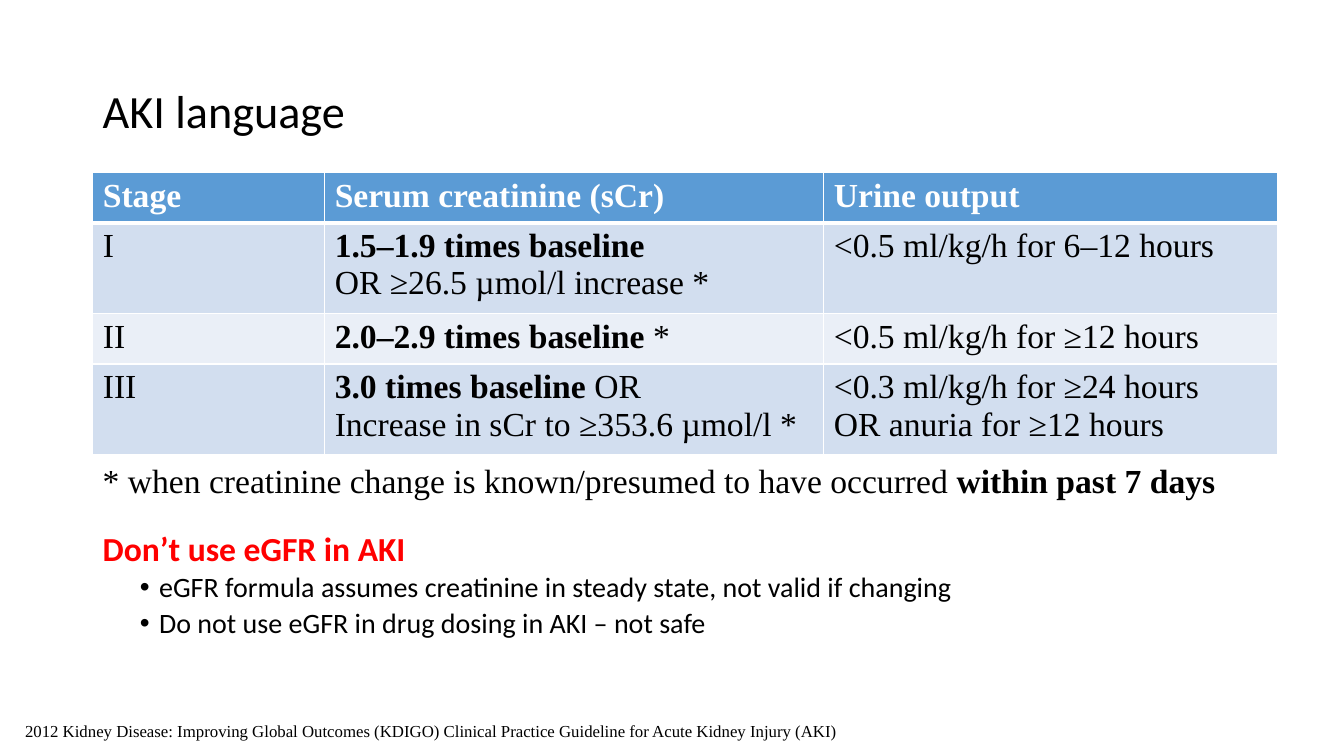
from dataclasses import dataclass

from lxml.etree import SubElement
from pptx import Presentation
from pptx.dml.color import RGBColor as Rgb
from pptx.enum.text import MSO_ANCHOR as Anchor, MSO_AUTO_SIZE as AutoSize
from pptx.oxml.ns import qn
from pptx.slide import Slide
from pptx.table import _Cell as Cell
from pptx.text.text import TextFrame
from pptx.util import Inches, Pt


@dataclass(frozen=True)
class Theme:
    """Colours, fonts and type sizes of the slide."""
    sans: str = "Calibri"
    serif: str = "Times New Roman"
    black: str = "000000"
    white: str = "FFFFFF"
    warning: str = "FF0000"
    header: str = "5B9BD5"
    bands: tuple[str, str] = ("D2DEEF", "EAEFF7")
    title_size: float = 33
    main_size: float = 24
    bullet_size: float = 20
    source_size: float = 12


THEME = Theme()


@dataclass(frozen=True)
class Span:
    """A stretch of text in one weight."""
    text: str
    bold: bool = False


@dataclass(frozen=True)
class Line:
    """A paragraph with its type and spacing."""
    spans: tuple[Span, ...]
    font: str = THEME.serif
    size: float = THEME.main_size
    color: str = THEME.black
    spacing: float = 1.0
    before: float = 0
    bullet: bool = False


@dataclass(frozen=True)
class Block:
    """A text box and its lines."""
    left: float
    top: float
    width: float
    height: float
    lines: tuple[Line, ...]
    anchor: Anchor = Anchor.TOP
    grows: bool = False


@dataclass(frozen=True)
class Row:
    """A table row: each cell is a tuple of lines."""
    height: float
    cells: tuple[tuple[Line, ...], ...]


def plain(text: str) -> Line:
    """Return a line in the regular serif type."""
    return Line((Span(text),))


def strong(text: str, rest: str = "") -> Line:
    """Return a serif line that opens in bold."""
    spans = (Span(text, True), Span(rest))
    return Line(spans if rest else spans[:1])


def heading(text: str) -> tuple[Line, ...]:
    """Return the content of a header cell."""
    return (Line((Span(text, True),), color=THEME.white),)


def advice(text: str) -> Line:
    """Return a bulleted line."""
    return Line((Span(text),), THEME.sans, THEME.bullet_size, spacing=0.9, before=3.8, bullet=True)


TITLE = Block(0.92, 0.4, 11.5, 1.45, (
    Line((Span("AKI language"),), THEME.sans, THEME.title_size, spacing=0.9),
), anchor=Anchor.MIDDLE)
EGFR_ADVICE = Block(0.92, 5.23, 12.07, 2.02, (
    Line((Span("Don’t use eGFR in AKI", True),), THEME.sans, color=THEME.warning, spacing=0.9),
    advice("eGFR formula assumes creatinine in steady state, not valid if changing"),
    advice("Do not use eGFR in drug dosing in AKI – not safe"),
))
GUIDELINE = Block(0.15, 7.1, 12.4, 0.3, (
    Line((Span("2012 Kidney Disease: Improving Global Outcomes (KDIGO) Clinical Practice "
               "Guideline for Acute Kidney Injury (AKI)"),), size=THEME.source_size),
), grows=True)
FOOTNOTE = Block(0.92, 4.51, 11.75, 0.5, (
    Line((Span("* when creatinine change is known/presumed to have occurred "),
          Span("within past 7 days", True))),
), grows=True)

STAGE_COLUMNS = (2.3, 4.95, 4.5)
STAGES = (
    Row(0.5, (heading("Stage"), heading("Serum creatinine (sCr)"), heading("Urine output"))),
    Row(0.9, ((plain("I"),),
              (strong("1.5–1.9 times baseline"), plain("OR ≥26.5 µmol/l increase *")),
              (plain("<0.5 ml/kg/h for 6–12 hours"),))),
    Row(0.5, ((plain("II"),),
              (strong("2.0–2.9 times baseline ", "*"),),
              (plain("<0.5 ml/kg/h for ≥12 hours"),))),
    Row(0.9, ((plain("III"),),
              (strong("3.0 times baseline ", "OR"), plain("Increase in sCr to ≥353.6 µmol/l *")),
              (plain("<0.3 ml/kg/h for ≥24 hours"), plain("OR anuria for ≥12 hours")))),
)


def write_lines(frame: TextFrame, lines: tuple[Line, ...]) -> None:
    """Fill a text frame with formatted lines."""
    for index, line in enumerate(lines):
        paragraph = frame.add_paragraph() if index else frame.paragraphs[0]
        if line.bullet:
            paragraph.level = 1
            properties = paragraph._p.get_or_add_pPr()
            properties.set("marL", str(Inches(0.56)))
            properties.set("indent", str(Inches(-0.19)))
            SubElement(properties, qn("a:buFont"), typeface="Arial")
            SubElement(properties, qn("a:buChar"), char="•")
        paragraph.line_spacing = line.spacing
        paragraph.space_before = Pt(line.before)
        for span in line.spans:
            run = paragraph.add_run()
            run.text = span.text
            run.font.name = line.font
            run.font.size = Pt(line.size)
            run.font.bold = span.bold
            run.font.color.rgb = Rgb.from_string(line.color)


def add_block(slide: Slide, block: Block) -> None:
    """Draw a text box."""
    box = slide.shapes.add_textbox(*map(Inches, (block.left, block.top, block.width, block.height)))
    frame = box.text_frame
    frame.word_wrap = True
    frame.vertical_anchor = block.anchor
    frame.auto_size = AutoSize.SHAPE_TO_FIT_TEXT if block.grows else AutoSize.NONE
    write_lines(frame, block.lines)


def style_cell(cell: Cell, row_index: int) -> None:
    """Give a cell its borders and band colour."""
    properties = cell._tc.get_or_add_tcPr()
    widths = {"L": 1, "R": 1, "T": 3 if row_index == 1 else 1, "B": 3 if row_index == 0 else 1}
    for side, width in widths.items():
        border = SubElement(properties, qn(f"a:ln{side}"), w=str(Pt(width)))
        SubElement(SubElement(border, qn("a:solidFill")), qn("a:srgbClr"), val=THEME.white)
    cell.fill.solid()
    color = THEME.bands[(row_index - 1) % 2] if row_index else THEME.header
    cell.fill.fore_color.rgb = Rgb.from_string(color)


def add_stages(slide: Slide) -> None:
    """Draw the table of AKI stages."""
    height = sum(row.height for row in STAGES)
    frame = slide.shapes.add_table(len(STAGES), len(STAGE_COLUMNS), Inches(0.92), Inches(1.71),
                                   Inches(sum(STAGE_COLUMNS)), Inches(height))
    table = frame.table
    for column, width in zip(table.columns, STAGE_COLUMNS):
        column.width = Inches(width)
    for row_index, row in enumerate(STAGES):
        table.rows[row_index].height = Inches(row.height)
        for column_index, lines in enumerate(row.cells):
            cell = table.cell(row_index, column_index)
            style_cell(cell, row_index)
            write_lines(cell.text_frame, lines)


def main() -> None:
    """Build and save the slide."""
    deck = Presentation()
    deck.slide_width, deck.slide_height = Inches(13.33), Inches(7.5)
    slide = deck.slides.add_slide(deck.slide_layouts[6])
    for block in (TITLE, EGFR_ADVICE, GUIDELINE):
        add_block(slide, block)
    add_stages(slide)
    add_block(slide, FOOTNOTE)
    deck.save("out.pptx")


if __name__ == "__main__":
    main()
